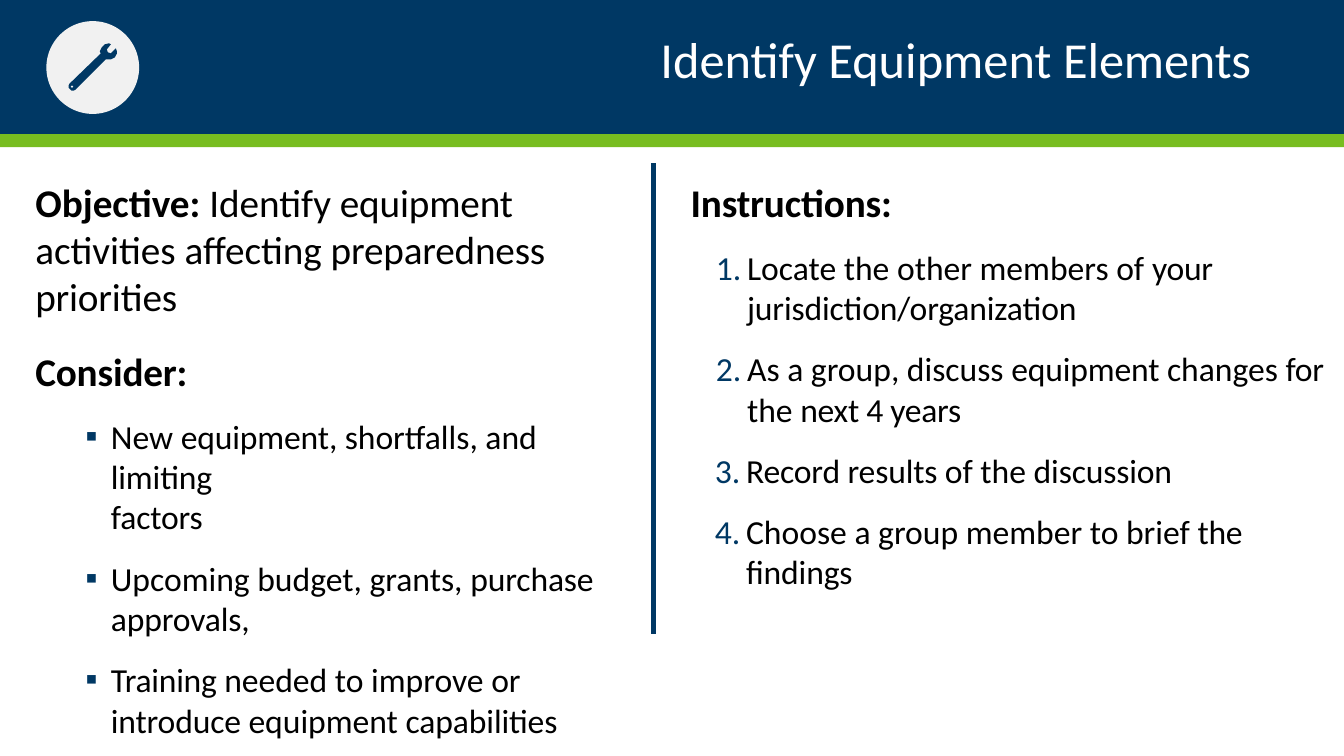
from lxml.etree import SubElement
from pptx import Presentation
from pptx.dml.color import RGBColor
from pptx.enum.shapes import MSO_CONNECTOR, MSO_SHAPE
from pptx.enum.text import MSO_ANCHOR, MSO_AUTO_SIZE, PP_ALIGN
from pptx.oxml.ns import qn
from pptx.util import Pt

PX = 9144  # EMU per px, 100 px to the inch
NAVY = RGBColor(0x00, 0x38, 0x64)
GREEN = RGBColor(0x78, 0xBD, 0x20)
PALE = RGBColor(0xF1, 0xF1, 0xF1)
WHITE = RGBColor(0xFF, 0xFF, 0xFF)
BLACK = RGBColor(0x00, 0x00, 0x00)

WRENCH = [(108, 43), (104, 44), (101, 47), (99, 51), (100, 53), (69, 83), (68, 85),
          (68, 87), (71, 90), (73, 90), (75, 89), (79, 85), (105, 59), (110, 59),
          (114, 57), (116, 53), (116, 51), (115, 48), (110, 53), (107, 52),
          (106, 49), (110, 44)]
WRENCH_HOLE = [(71, 85), (72, 85), (73, 86), (72, 87), (71, 87), (70, 86)]


class SlideBuilder:
    font = "Calibri"
    heading_size = 28
    item_size = 24

    def __init__(self, slide):
        self.slide = slide
        self.shapes = slide.shapes

    def paint(self, shape, color):
        shape.shadow.inherit = False
        shape.fill.solid()
        shape.fill.fore_color.rgb = color
        shape.line.fill.background()

    def preset(self, kind, left, top, width, height, color):
        shape = self.shapes.add_shape(kind, left * PX, top * PX, width * PX, height * PX)
        self.paint(shape, color)

    def outline(self, contours, color):
        """Draw one filled shape from closed contours; inner ones are holes."""
        first, *holes = contours
        builder = self.shapes.build_freeform(*first[0], scale=PX)
        builder.add_line_segments(first[1:])
        for hole in holes:
            builder.move_to(*hole[0])
            builder.add_line_segments(hole[1:])
        self.paint(builder.convert_to_shape(), color)

    def rule(self, x1, y1, x2, y2, color, weight):
        line = self.shapes.add_connector(
            MSO_CONNECTOR.STRAIGHT, x1 * PX, y1 * PX, x2 * PX, y2 * PX)
        line.line.color.rgb = color
        line.line.width = Pt(weight)
        SubElement(line.element.spPr, qn("a:effectLst"))

    def frame(self, shape, inset_top, inset_right=0):
        text = shape.text_frame
        text.word_wrap = True
        text.auto_size = MSO_AUTO_SIZE.SHAPE_TO_FIT_TEXT
        text.vertical_anchor = MSO_ANCHOR.TOP
        text.margin_left = text.margin_bottom = 0
        text.margin_top = inset_top * PX
        text.margin_right = inset_right * PX
        return text

    def paragraph(self, paragraph, runs, size, color=BLACK, before=0,
                  left=0, hang=0, bullet=None, number=None):
        """Fill a paragraph; each run is (words, letter spacing[, bold])."""
        paragraph.alignment = PP_ALIGN.LEFT
        paragraph.space_before = Pt(before)
        props = paragraph._p.get_or_add_pPr()
        props.set("marL", str(left * PX))
        props.set("indent", str(-hang * PX))
        if bullet or number:
            tint = SubElement(props, qn("a:buClr"))
            SubElement(tint, qn("a:srgbClr"), val=str(NAVY))
            SubElement(props, qn("a:buFont"), typeface=self.font)
            if bullet:
                SubElement(props, qn("a:buChar"), char=bullet)
            else:
                SubElement(props, qn("a:buAutoNum"), type="arabicPeriod", startAt=str(number))
        for words, spacing, *bold in runs:
            run = paragraph.add_run()
            run.text = words
            run.font.name = self.font
            run.font.size = Pt(size)
            run.font.bold = bool(bold)
            run.font.color.rgb = color
            run._r.get_or_add_rPr().set("spc", str(spacing))

    def title(self, left, top, width, height, indent, runs):
        title = self.shapes.title
        title.left, title.top = left * PX, top * PX
        title.width, title.height = width * PX, height * PX
        text = self.frame(title, 25)
        self.paragraph(text.paragraphs[0], runs, 36, WHITE, left=indent)
        title.element.getparent().append(title.element)  # in front of the header band

    def column(self, left, top, width, height, inset_top, paragraphs, inset_right=0):
        box = self.shapes.add_textbox(left * PX, top * PX, width * PX, height * PX)
        text = self.frame(box, inset_top, inset_right)
        for index, (runs, style) in enumerate(paragraphs):
            target = text.add_paragraph() if index else text.paragraphs[0]
            self.paragraph(target, runs, **style)


def heading(*runs, before=0):
    return runs, dict(size=SlideBuilder.heading_size, left=1, before=before)


def item(*runs, **style):
    return runs, dict(size=SlideBuilder.item_size, **style)


def main():
    deck = Presentation()
    deck.slide_width, deck.slide_height = 1333 * PX, 750 * PX
    page = SlideBuilder(deck.slides.add_slide(deck.slide_layouts[5]))

    page.preset(MSO_SHAPE.RECTANGLE, 0, 0, 1333, 133, NAVY)
    page.preset(MSO_SHAPE.RECTANGLE, 0, 133, 1333, 13, GREEN)
    page.title(254, 3, 990, 111, 401, [("Identify Equipment ", 0), ("Elements", -10)])

    bulleted = dict(left=76, hang=25, bullet="▪", before=15)
    page.column(34, 176, 612, 520, 1, [
        heading(("Objective: ", 0, True), ("Identify ", 0), ("equipment ", -10),
                ("activities affecting ", 0), ("preparedness priorities", -10)),
        heading(("Consider:", -10, True), before=20),
        item(("New ", 0), ("equipment, ", -10), ("shortfalls, and ", 0),
             ("limiting", -10), **bulleted),
        item(("factors", -10), left=76),
        item(("Upcoming budget, grants, ", 0), ("purchase approvals,", -10), **bulleted),
        item(("Training ", -20), ("needed to improve ", 0), ("or ", -20),
             ("introduce ", -10), ("equipment ", 0), ("capabilities", -10), **bulleted),
    ], inset_right=12)

    numbered = dict(left=57, hang=31, before=15)
    page.column(684, 151, 633, 338, 26, [
        heading(("Instructions:", -10, True)),
        item(("Locate the other members of ", 0), ("your", -20), number=1, **numbered),
        item(("jurisdiction/organization", -10), left=57),
        item(("As a group, discuss ", 0), ("equipment ", -10), ("changes ", 0),
             ("for ", -20), ("the ", 0), ("next 4 years", -20), number=2, **numbered),
    ])
    numbered["left"] = 32
    page.column(708, 424, 527, 164, 22, [
        item(("Record results ", -10), ("of the ", 0), ("discussion", -10),
             number=3, **numbered),
        item(("Choose a group member to brief ", 0), ("the ", -20), ("findings", -10),
             number=3, **numbered),
    ])

    page.rule(648, 162, 648, 629, NAVY, 3.75)
    page.preset(MSO_SHAPE.OVAL, 46, 21, 92, 92, PALE)
    page.outline([WRENCH, WRENCH_HOLE], NAVY)

    deck.save("out.pptx")


if __name__ == "__main__":
    main()
